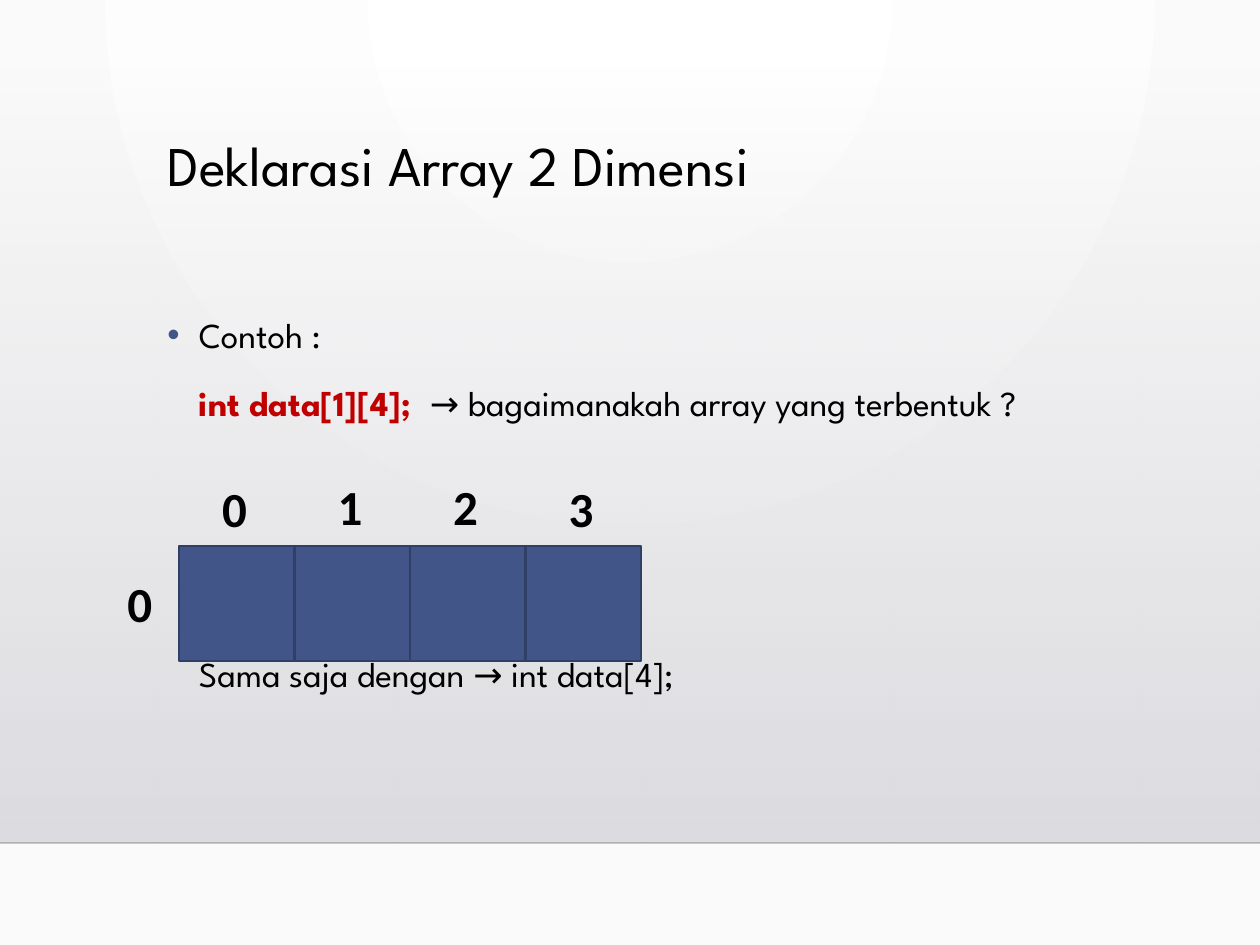
from lxml import etree
from pptx import Presentation
from pptx import util as u
from pptx.dml.color import RGBColor
from pptx.enum import shapes, text
from pptx.oxml.ns import qn

PX = 914400 // 126
W, H = 1260, 945
FLOOR = 843

BLACK = RGBColor(0, 0, 0)
WHITE = RGBColor(0xFF, 0xFF, 0xFF)
PAPER = RGBColor(0xFA, 0xFA, 0xFA)
SHADE_TOP = RGBColor(0xDC, 0xDC, 0xE0)
SHADE_END = RGBColor(0xDA, 0xDA, 0xDE)
EDGE = RGBColor(0, 0, 1)
BLUE = RGBColor(0x41, 0x55, 0x88)
NAVY = RGBColor(0x30, 0x3F, 0x65)
RED = RGBColor(0xC0, 0, 0)

BODY_FONT = dict(name="League Spartan", size=u.Pt(20), bold=False)
LABEL_FONT = dict(name="Calibri", size=u.Pt(28), bold=True)

# Content
TITLE = "Deklarasi Array 2 Dimensi"
BODY = [  # space before (pt), bullet, runs of (text, colour, bold)
    (0, True, [("Contoh :", BLACK, False)]),
    (10, False, [("int data[1][4];  ", RED, True),
                 ("→ bagaimanakah array yang terbentuk ?", BLACK, False)]),
    (126, False, [("Sama saja dengan → int data[4];", BLACK, False)]),
]
COLUMNS = [("0", 472), ("1", 470), ("2", 470), ("3", 472)]  # index, label top
ROW = ("0", 115, 567)  # index, label left, label top
ARRAY_LEFT, ARRAY_TOP, ARRAY_W = 179, 546, 462
LABEL_W, LABEL_H = 50, 72


def px(*values):
    return [u.Emu(round(v * PX)) for v in values]


def style(font, values, colour):
    for key, value in values.items():
        setattr(font, key, value)
    font.color.rgb = colour


def add_label(s, words, x, y):
    tf = s.shapes.add_textbox(*px(x, y, LABEL_W, LABEL_H)).text_frame
    tf.word_wrap = False
    tf.auto_size = text.MSO_AUTO_SIZE.SHAPE_TO_FIT_TEXT
    r = tf.paragraphs[0].add_run()
    r.text = words
    style(r.font, LABEL_FONT, BLACK)


def set_bullet(p, bullet):
    pPr = p._p.get_or_add_pPr()
    pPr.set("marL", "228600")
    pPr.set("indent", "-228600" if bullet else "0")
    if bullet:
        colour = etree.SubElement(pPr, qn("a:buClr"))
        etree.SubElement(colour, qn("a:srgbClr"), val=str(BLUE))
        etree.SubElement(pPr, qn("a:buFont"), typeface="Arial")
        etree.SubElement(pPr, qn("a:buChar"), char="•")
    else:
        etree.SubElement(pPr, qn("a:buNone"))


def set_gradient(fill, colours):
    fill.gradient()
    for position, (stop, colour) in enumerate(zip(fill.gradient_stops, colours)):
        stop.color.rgb = colour
        stop.position = position


def set_opacity(element, percent):
    colour = next(element.iter(qn("a:srgbClr")))
    etree.SubElement(colour, qn("a:alpha"), val=str(percent * 1000))


def add_backdrop(s):
    # Round glow from the top edge
    set_gradient(s.background.fill, (WHITE, PAPER))
    linear = next(s._element.iter(qn("a:lin")))
    glow = etree.Element(qn("a:path"), path="circle")
    etree.SubElement(glow, qn("a:fillToRect"), l="43000", t="0", r="43000", b="100000")
    linear.getparent().replace(linear, glow)

    # Shade that fades in downwards
    shade = s.shapes.add_shape(shapes.MSO_SHAPE.RECTANGLE, *px(0, 64, W, FLOOR - 64))
    shade.shadow.inherit = False
    shade.line.fill.background()
    set_gradient(shade.fill, (SHADE_TOP, SHADE_END))
    shade.fill.gradient_angle = 270
    set_opacity(shade._element.spPr, 0)

    # Floor line
    floor = s.shapes.add_connector(shapes.MSO_CONNECTOR.STRAIGHT, *px(0, FLOOR, W, FLOOR))
    floor.line.color.rgb = EDGE
    floor.line.width = u.Pt(1)
    set_opacity(floor._element.spPr, 20)
    etree.SubElement(floor._element.spPr, qn("a:effectLst"))

    # Keep the backdrop behind the title
    for i, part in enumerate((shade, floor)):
        s.shapes._spTree.insert(2 + i, part._element)


def main():
    prs = Presentation()
    prs.slide_width, prs.slide_height = px(W, H)
    s = prs.slides.add_slide(prs.slide_layouts[5])
    add_backdrop(s)

    # Title
    title = s.shapes.title
    title.left, title.top, title.width, title.height = px(155, 132, 906, 145)
    tf = title.text_frame
    tf.text = TITLE
    tf.vertical_anchor = text.MSO_ANCHOR.TOP
    p = tf.paragraphs[0]
    p.alignment = text.PP_ALIGN.LEFT
    p.line_spacing = 0.9
    style(p.runs[0].font, dict(BODY_FONT, size=u.Pt(32)), BLACK)

    # Body
    tf = s.shapes.add_textbox(*px(155, 299, 906, 454)).text_frame
    tf.word_wrap = True
    for i, (before, bullet, runs) in enumerate(BODY):
        p = tf.add_paragraph() if i else tf.paragraphs[0]
        set_bullet(p, bullet)
        p.line_spacing = 1.2
        if before:
            p.space_before = u.Pt(before)
        for words, colour, bold in runs:
            r = p.add_run()
            r.text = words
            style(r.font, dict(BODY_FONT, bold=bold), colour)

    # Array cells with their column indexes
    cell = ARRAY_W / len(COLUMNS)
    for i, (index, top) in enumerate(COLUMNS):
        x = ARRAY_LEFT + i * cell
        sp = s.shapes.add_shape(shapes.MSO_SHAPE.RECTANGLE, *px(x, ARRAY_TOP, cell, cell))
        sp.shadow.inherit = False
        sp.fill.solid()
        sp.fill.fore_color.rgb = BLUE
        sp.line.color.rgb = NAVY
        sp.line.width = u.Pt(1.25)
        add_label(s, index, x + (cell - LABEL_W) / 2 - 2, top)

    # Row index
    add_label(s, *ROW)

    prs.save("out.pptx")


if __name__ == "__main__":
    main()
